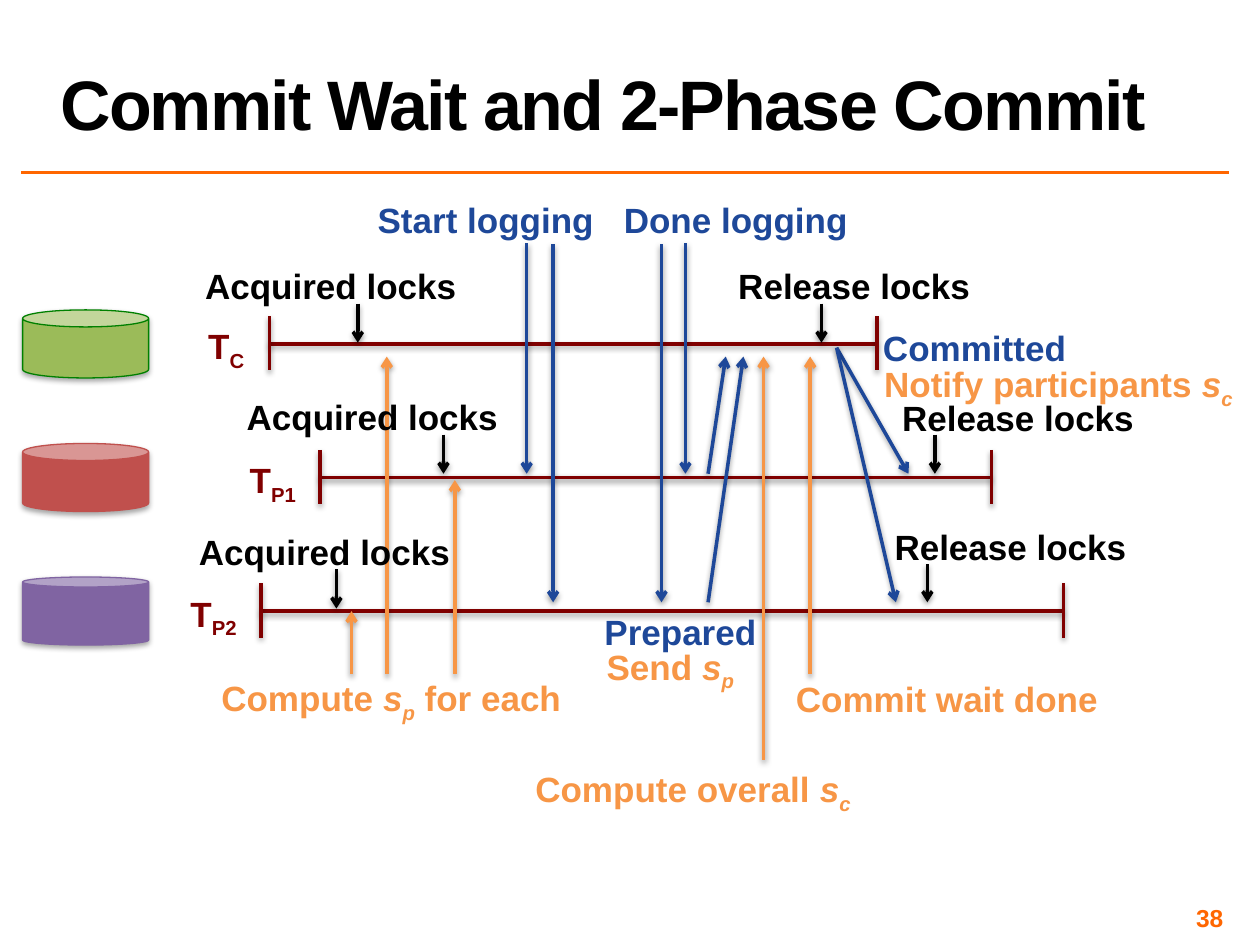
from dataclasses import dataclass

from lxml.etree import SubElement
from pptx import Presentation
from pptx.dml.color import RGBColor
from pptx.enum.shapes import MSO_CONNECTOR, MSO_SHAPE
from pptx.enum.text import MSO_ANCHOR, MSO_AUTO_SIZE, PP_ALIGN
from pptx.oxml.ns import qn
from pptx.util import Emu, Pt


@dataclass(frozen=True)
class Theme:
    font: str = "Arial"
    black: str = "000000"
    accent: str = "FF6600"
    rail: str = "800000"
    blue: str = "1E4899"
    orange: str = "F79646"
    green: str = "9BBB59"
    rim: str = "008000"
    red: str = "C0504D"
    purple: str = "8064A2"
    head: int = 40
    body: int = 20
    page: int = 14
    line: float = 2
    edge: float = 0.75


T = Theme()
PX = 9144  # 100 px to the inch

# Timelines: name, left, right, label left, store fill, store edge, rim depth
TOP, STEP = 273, 106
RAILS = [
    ("C", 214, 696, 149, T.green, T.rim, 0.25),
    ("P1", 254, 787, 186, T.red, T.red, 0.25),
    ("P2", 207, 844, 139, T.purple, T.purple, 0.147),
]

# Arrows by colour: from x, y to x, y
ARROWS = {
    T.black: [
        (284, 241, 284, 272), (652, 241, 652, 272),
        (352, 345, 352, 376), (742, 345, 742, 376),
        (267, 452, 267, 483), (736, 448, 736, 478),
    ],
    T.orange: [
        (361, 535, 361, 381), (643, 535, 643, 283), (307, 535, 307, 283),
        (279, 535, 279, 485), (606, 603, 606, 283),
    ],
    T.blue: [
        (664, 276, 721, 376), (664, 276, 711, 478),
        (418, 193, 418, 376), (544, 193, 544, 376),
        (525, 194, 525, 478), (439, 194, 439, 478),
        (562, 376, 576, 283), (562, 478, 590, 283),
    ],
}

# Labels by colour: left, top, width, runs of (text, style); i italic, s subscript
LABELS = {
    T.black: [
        (152, 205, 221, [("Acquired locks", "")]),
        (575, 205, 206, [("Release locks", "")]),
        (185, 309, 221, [("Acquired locks", "")]),
        (705, 310, 206, [("Release locks", "")]),
        (147, 416, 221, [("Acquired locks", "")]),
        (699, 412, 206, [("Release locks", "")]),
    ],
    T.blue: [
        (289, 153, 193, [("Start logging", "")]),
        (484, 153, 200, [("Done logging", "")]),
        (469, 480, 142, [("Prepared", "")]),
        (690, 254, 167, [("Committed", "")]),
    ],
    T.orange: [
        (690, 283, 300, [("Notify participants ", ""), ("s", "i"), ("c", "is")]),
        (621, 533, 261, [("Commit wait done", "")]),
        (161, 532, 299, [("Compute ", ""), ("s", "i"), ("p", "is"), (" for each", "")]),
        (413, 604, 274, [("Compute overall ", ""), ("s", "i"), ("c", "is")]),
        (470, 507, 124, [("Send ", ""), ("s", "i"), ("p", "is")]),
    ],
}


def emu(*vals):
    return [Emu(v * PX) for v in vals]


def rgb(code):
    return RGBColor.from_string(code)


def shade(item, alpha):
    """Give a shape or line a soft shadow straight below it; 0 means none."""
    fx = SubElement(item._element.spPr, qn("a:effectLst"))
    if alpha:
        drop = SubElement(fx, qn("a:outerShdw"), blurRad="40000", dist="20000",
                          dir="5400000", rotWithShape="0")
        tint = SubElement(drop, qn("a:srgbClr"), val=T.black)
        SubElement(tint, qn("a:alpha"), val=str(alpha * 1000))


def draw(ends, color, tip=False, alpha=38):
    line = shapes.add_connector(MSO_CONNECTOR.STRAIGHT, *emu(*ends))
    line.line.color.rgb = rgb(color)
    line.line.width = Pt(T.line)
    if tip:
        SubElement(line.line._get_or_add_ln(), qn("a:tailEnd"), type="arrow")
    shade(line, alpha)


def write(box, runs, color, size=T.body, align=PP_ALIGN.CENTER, wrap=False):
    text = shapes.add_textbox(*emu(*box))
    frame = text.text_frame
    frame.word_wrap = wrap
    para = frame.paragraphs[0]
    para.alignment = align
    for word, style in runs:
        run = para.add_run()
        run.text = word
        font = run.font
        font.name, font.size, font.bold = T.font, Pt(size), True
        font.color.rgb = rgb(color)
        if "i" in style:
            font.italic = True
        if "s" in style:
            font._element.set("baseline", "-25000")
    return frame


deck = Presentation()
deck.slide_width, deck.slide_height = emu(1000, 750)
shapes = deck.slides.add_slide(deck.slide_layouts[6]).shapes

# Title, rule and page number
draw((17, 137, 975, 137), T.accent, alpha=0)
title = write((38, 2, 937, 117), [("Commit Wait and 2-Phase Commit", "")],
              T.black, T.head, PP_ALIGN.LEFT, True)
title.vertical_anchor = MSO_ANCHOR.BOTTOM
title.paragraphs[0].line_spacing = 0.8
title.paragraphs[0].runs[0].font._element.set("spc", "-100")

page = write((742, 717, 233, 23), [("38", "")], T.accent, T.page, PP_ALIGN.RIGHT, True)
page.vertical_anchor = MSO_ANCHOR.MIDDLE
page.margin_left, page.margin_top, page.margin_right, page.margin_bottom = emu(4, 4, 4, 4)

# Timelines with end caps, names and data stores
for row, (name, left, right, side, fill, edge, rim) in enumerate(RAILS):
    y = TOP + row * STEP
    draw((left - 1, y, right, y), T.rail)
    for x in (left, right):
        draw((x, y - 22, x, y + 21), T.rail)
    write((side, y - 20, 61, 44), [("T", ""), (name, "s")], T.rail, wrap=True)
    can = shapes.add_shape(MSO_SHAPE.CAN, *emu(18, y - 27, 100, 54))
    can.adjustments[0] = rim
    can.fill.solid()
    can.fill.fore_color.rgb = rgb(fill)
    can.line.color.rgb = rgb(edge)
    can.line.width = Pt(T.edge)
    shade(can, 35)

# Events
for color, group in ARROWS.items():
    for ends in group:
        draw(ends, color, tip=True)

# Event labels
for color, group in LABELS.items():
    for x, y, wide, runs in group:
        frame = write((x, y, wide, 44), runs, color)
        frame.auto_size = MSO_AUTO_SIZE.SHAPE_TO_FIT_TEXT

deck.save("out.pptx")
